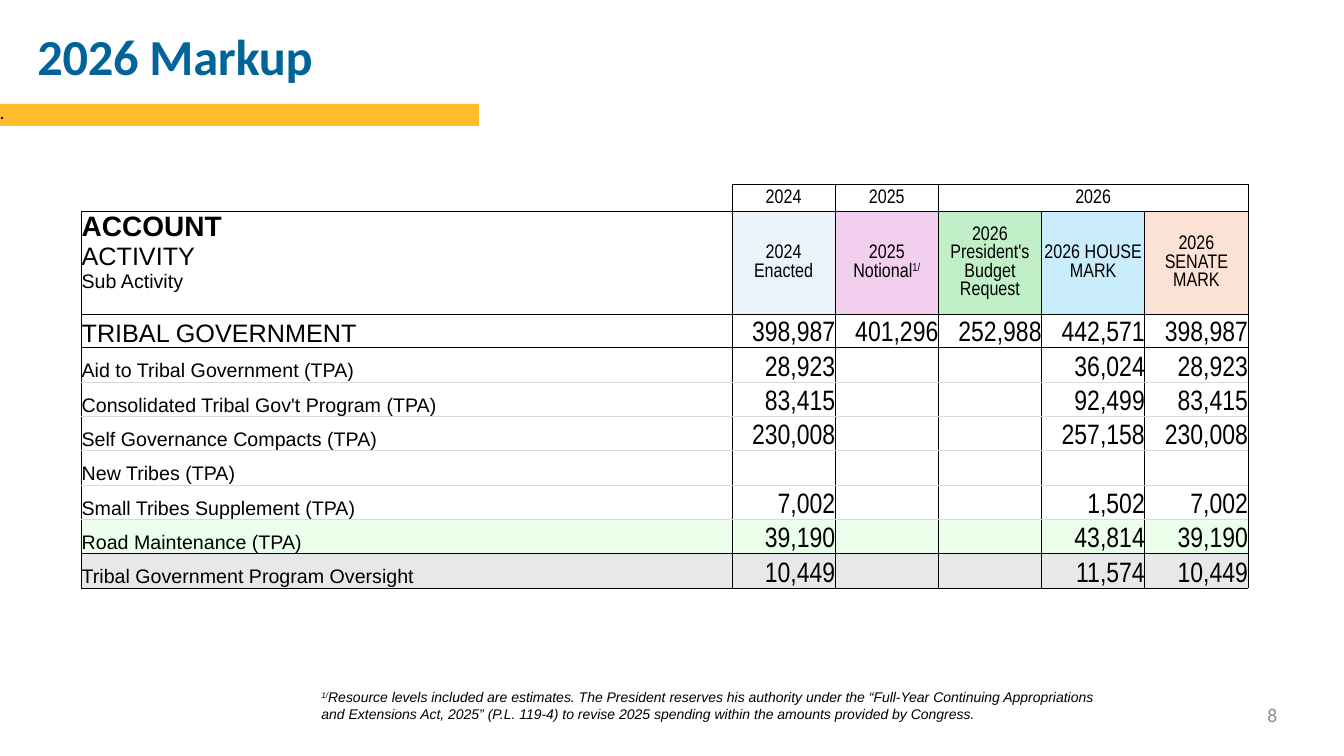
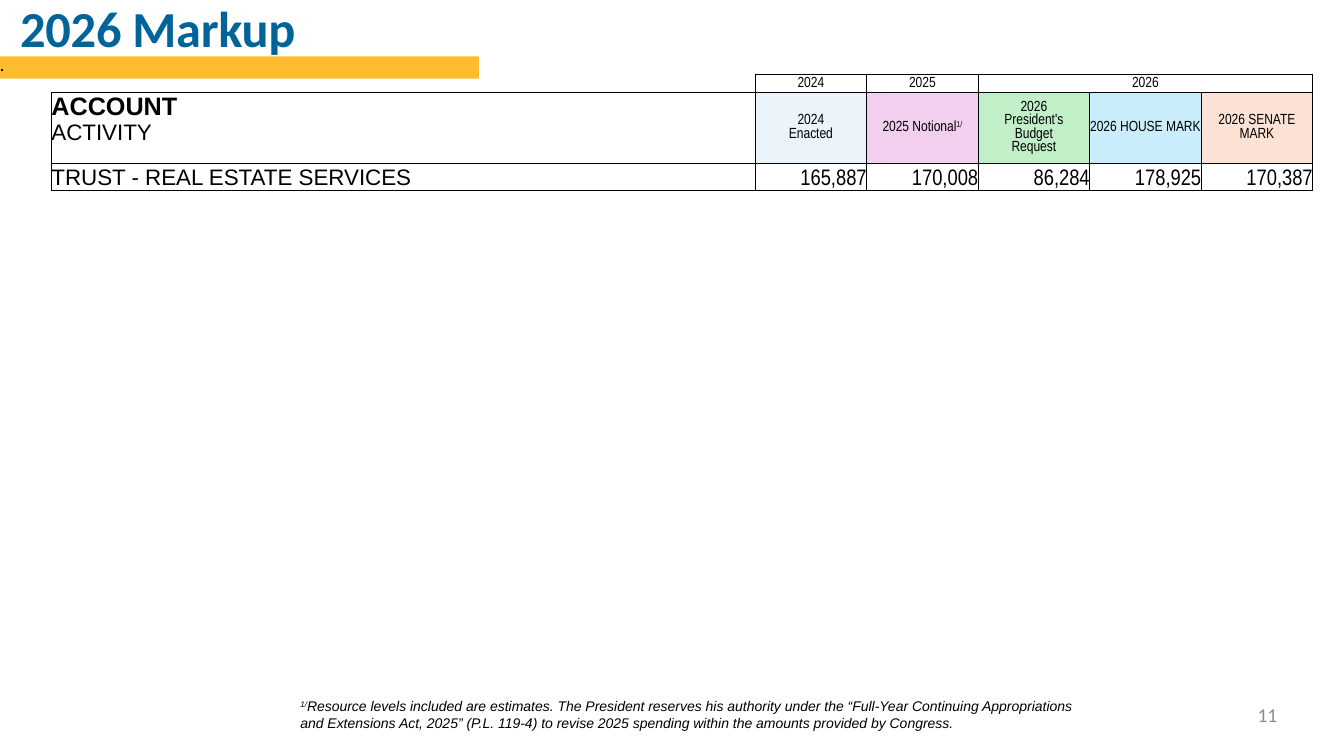
import copy
import dataclasses
import lxml.etree
import pptx
import pptx.dml.color
import pptx.enum.shapes
import pptx.enum.text
import pptx.oxml.ns
import pptx.util

Inches = pptx.util.Inches
Align = pptx.enum.text.PP_ALIGN
Anchor = pptx.enum.text.MSO_ANCHOR
qualify = pptx.oxml.ns.qn


@dataclasses.dataclass(frozen=True)
class Theme:
    title: str = "006499"
    band: str = "FFBD2D"
    text: str = "000000"
    muted: str = "8C8C8C"
    rule: str = "000000"
    light_rule: str = "D9D9D9"
    highlight: str = "EBFFEB"
    oversight: str = "E8E8E8"
    header_fills: tuple = ("EBF3FB", "F2CEEF", "C1F0C8", "CAEDFB", "FBE2D5")
    heading_font: str = "Calibri"
    body_font: str = "Arial"
    number_font: str = "Arial Narrow"
    title_size: float = 36
    band_size: float = 11
    page_size: float = 14
    note_size: float = 10
    rule_width: float = 0.5


@dataclasses.dataclass(frozen=True)
class TableStyle:
    account_size: float
    activity_size: float
    header_size: float
    detail_size: float
    value_size: float
    year_height: float
    header_height: float
    row_height: float


@dataclasses.dataclass(frozen=True)
class BudgetRow:
    label: str
    values: tuple
    fill: str = None
    is_activity: bool = False
    rule: str = "000000"


THEME = Theme()
LARGE = TableStyle(20, 18, 14, 14, 20, 0.27, 1.02, 0.33)
COMPACT = TableStyle(18, 16, 10.5, 14, 16, 0.17, 0.7, 0.27)
YEARS = ("2024", "2025", "2026", "", "")
COLUMNS = (
    "2024\nEnacted",
    "2025 Notional",
    "2026\nPresident's\nBudget\nRequest",
    "2026 HOUSE MARK",
    "2026 SENATE MARK",
)
NOTE = (
    "Resource levels included are estimates. The President reserves his authority under the "
    "“Full-Year Continuing Appropriations and Extensions Act, 2025” (P.L. 119-4) to revise "
    "2025 spending within the amounts provided by Congress."
)


def rgb(color):
    return pptx.dml.color.RGBColor.from_string(color)


def add_text(paragraph, text, size, font=THEME.body_font, color=THEME.text,
             bold=False, italic=False, raised=False, spacing=None, align=None):
    if align is not None:
        paragraph.alignment = align
    for index, line in enumerate(text.split("\n")):
        if index:
            paragraph.add_line_break()
            paragraph._p[-1].append(copy.deepcopy(run._r.rPr))
        if not line:
            continue
        run = paragraph.add_run()
        run.text = line
        run.font.size = pptx.util.Pt(size)
        run.font.name = font
        run.font.bold = bold
        run.font.italic = italic
        run.font.color.rgb = rgb(color)
        if raised:
            run._r.rPr.set("baseline", "30000")
        if spacing is not None:
            run._r.rPr.set("spc", str(spacing))
    if not text:
        lxml.etree.SubElement(paragraph._p, qualify("a:endParaRPr"), sz=str(int(size * 100)))


def clear_margins(target):
    target.margin_left = target.margin_right = 0
    target.margin_top = target.margin_bottom = 0


def prepare_frame(shape, has_margins=False):
    frame = shape.text_frame
    frame.word_wrap = True
    frame.auto_size = pptx.enum.text.MSO_AUTO_SIZE.NONE
    frame.vertical_anchor = Anchor.TOP
    if not has_margins:
        clear_margins(frame)
    return frame


def add_title(slide, left, top):
    title = slide.shapes.title
    title.left, title.top = Inches(left), Inches(top)
    title.width, title.height = Inches(8.99), Inches(0.62)
    frame = prepare_frame(title)
    frame.margin_left = frame.margin_top = Inches(0.01)
    add_text(frame.paragraphs[0], "2026 Markup", THEME.title_size, font=THEME.heading_font,
             color=THEME.title, bold=True, spacing=-20, align=Align.LEFT)


def add_band(slide, top):
    band = slide.shapes.add_shape(pptx.enum.shapes.MSO_SHAPE.RECTANGLE,
                                  0, Inches(top), Inches(4.75), Inches(0.22))
    band.shadow.inherit = False
    band.fill.solid()
    band.fill.fore_color.rgb = rgb(THEME.band)
    band.line.fill.background()
    add_text(prepare_frame(band).paragraphs[0], ".", THEME.band_size,
             font=THEME.heading_font, bold=True, align=Align.LEFT)


def add_page_number(slide, number):
    box = slide.shapes.add_textbox(Inches(9.6), Inches(6.97), Inches(3.07), Inches(0.24))
    add_text(prepare_frame(box).paragraphs[0], number, THEME.page_size,
             font=THEME.heading_font, color=THEME.muted, align=Align.RIGHT)


def add_note(slide, left, top):
    box = slide.shapes.add_textbox(Inches(left), Inches(top), Inches(7.91), Inches(0.44))
    paragraph = prepare_frame(box, has_margins=True).paragraphs[0]
    add_text(paragraph, "1/", THEME.note_size, italic=True, raised=True)
    add_text(paragraph, NOTE, THEME.note_size, italic=True)


def add_slide(presentation, number, title_at, band_top, note_at):
    slide = presentation.slides.add_slide(presentation.slide_layouts[5])
    add_band(slide, band_top)
    add_page_number(slide, number)
    add_title(slide, *title_at)
    add_note(slide, *note_at)
    return slide


def set_borders(cell, left=THEME.rule, right=THEME.rule, top=THEME.rule, bottom=THEME.rule):
    properties = cell._tc.get_or_add_tcPr()
    for side, color in zip("LRTB", (left, right, top, bottom)):
        line = lxml.etree.SubElement(properties, qualify(f"a:ln{side}"),
                                     w=str(pptx.util.Pt(THEME.rule_width)))
        if color is None:
            lxml.etree.SubElement(line, qualify("a:noFill"))
        else:
            fill = lxml.etree.SubElement(line, qualify("a:solidFill"))
            lxml.etree.SubElement(fill, qualify("a:srgbClr"), val=color)


def format_cell(cell, fill=None, anchor=Anchor.MIDDLE, **borders):
    set_borders(cell, **borders)
    clear_margins(cell)
    cell.vertical_anchor = anchor
    if fill:
        cell.fill.solid()
        cell.fill.fore_color.rgb = rgb(fill)
    else:
        cell.fill.background()
    return cell.text_frame.paragraphs[0]


def fill_header(table, style, has_details):
    corner = format_cell(table.cell(0, 0), left=None, top=None)
    add_text(corner, "", style.header_size)

    account = format_cell(table.cell(1, 0), anchor=Anchor.TOP)
    add_text(account, "ACCOUNT\n", style.account_size, bold=True)
    if has_details:
        add_text(account, "ACTIVITY\n", style.activity_size)
        add_text(account, "Sub Activity", style.detail_size)
    else:
        add_text(account, "ACTIVITY", style.activity_size)

    header_format = dict(size=style.header_size, font=THEME.number_font, align=Align.CENTER)
    headings = zip(YEARS, COLUMNS, THEME.header_fills)
    for column, (year, name, fill) in enumerate(headings, start=1):
        add_text(format_cell(table.cell(0, column)), year, **header_format)
        paragraph = format_cell(table.cell(1, column), fill=fill)
        add_text(paragraph, name, **header_format)
        if name == "2025 Notional":
            add_text(paragraph, "1/", raised=True, **header_format)
    table.cell(0, 3).merge(table.cell(0, 5))


def add_budget_table(slide, left, top, width, label_width, style, rows):
    heights = [style.year_height, style.header_height] + [style.row_height] * len(rows)
    frame = slide.shapes.add_table(len(heights), len(COLUMNS) + 1, Inches(left), Inches(top),
                                   Inches(width), Inches(sum(heights)))
    table = frame.table
    table.first_row = table.horz_banding = False
    value_width = (width - label_width) / len(COLUMNS)
    for column, column_width in zip(table.columns, [label_width] + [value_width] * len(COLUMNS)):
        column.width = Inches(column_width)
    for table_row, height in zip(table.rows, heights):
        table_row.height = Inches(height)

    fill_header(table, style, has_details=len(rows) > 1)
    rule_above = THEME.rule
    for index, row in enumerate(rows, start=2):
        cell_format = dict(fill=row.fill, anchor=Anchor.BOTTOM, top=rule_above, bottom=row.rule)
        label_size = style.activity_size if row.is_activity else style.detail_size
        add_text(format_cell(table.cell(index, 0), **cell_format), row.label, label_size)
        for column, value in enumerate(row.values, start=1):
            add_text(format_cell(table.cell(index, column), **cell_format), value,
                     style.value_size, font=THEME.number_font, align=Align.RIGHT)
        rule_above = row.rule


def detail_row(label, enacted, house, senate, fill=None, rule=THEME.light_rule):
    return BudgetRow(label, (enacted, "", "", house, senate), fill=fill, rule=rule)


def main():
    presentation = pptx.Presentation()
    presentation.slide_width, presentation.slide_height = Inches(13.33), Inches(7.5)

    government = add_slide(presentation, "8", (0.36, 0.24), 1.03, (3.09, 6.78))
    add_budget_table(government, 0.81, 1.83, 11.57, 6.45, LARGE, (
        BudgetRow("TRIBAL GOVERNMENT", ("398,987", "401,296", "252,988", "442,571", "398,987"),
                  is_activity=True),
        detail_row("Aid to Tribal Government (TPA)", "28,923", "36,024", "28,923"),
        detail_row("Consolidated Tribal Gov't Program (TPA)", "83,415", "92,499", "83,415"),
        detail_row("Self Governance Compacts (TPA)", "230,008", "257,158", "230,008"),
        detail_row("New Tribes (TPA)", "", "", ""),
        detail_row("Small Tribes Supplement (TPA)", "7,002", "1,502", "7,002"),
        detail_row("Road Maintenance (TPA)", "39,190", "43,814", "39,190",
                   fill=THEME.highlight, rule=THEME.rule),
        detail_row("Tribal Government Program Oversight", "10,449", "11,574", "10,449",
                   fill=THEME.oversight, rule=THEME.rule),
    ))

    real_estate = add_slide(presentation, "11", (0.19, -0.04), 0.56, (2.88, 6.87))
    add_budget_table(real_estate, 0.51, 0.74, 12.51, 6.98, COMPACT, (
        BudgetRow("TRUST - REAL ESTATE SERVICES",
                  ("165,887", "170,008", "86,284", "178,925", "170,387"), is_activity=True),
    ))
    presentation.save("out.pptx")


if __name__ == "__main__":
    main()
